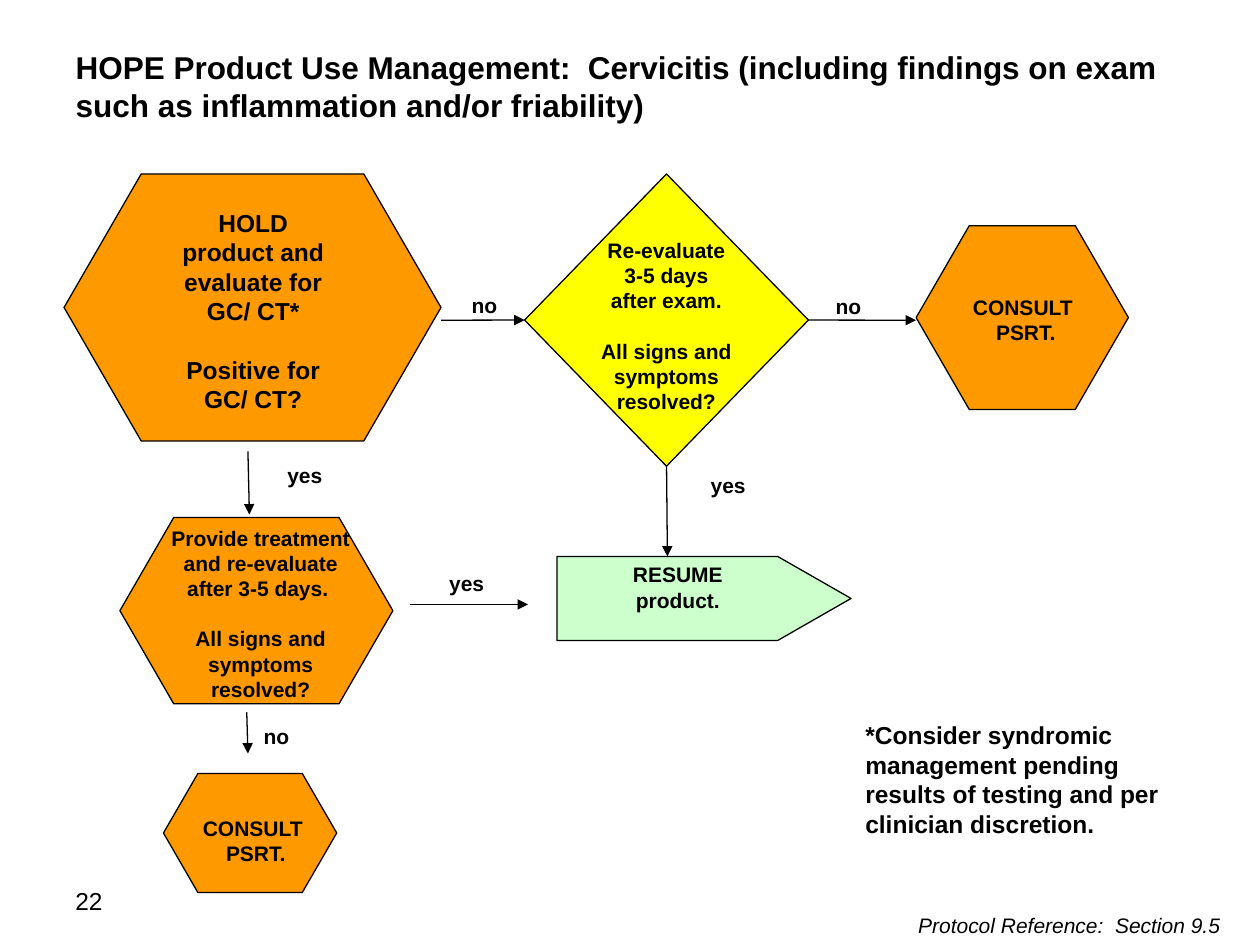
from lxml import etree
from pptx import Presentation
from pptx.dml.color import RGBColor
from pptx.enum.shapes import MSO_CONNECTOR, MSO_SHAPE
from pptx.enum.text import MSO_ANCHOR, PP_ALIGN
from pptx.oxml.ns import qn
from pptx.util import Pt

HEXAGON, DIAMOND, PENTAGON = MSO_SHAPE.HEXAGON, MSO_SHAPE.DIAMOND, MSO_SHAPE.PENTAGON
STRAIGHT = MSO_CONNECTOR.STRAIGHT
LEFT, CENTER, RIGHT = PP_ALIGN.LEFT, PP_ALIGN.CENTER, PP_ALIGN.RIGHT
TOP = MSO_ANCHOR.TOP

BLACK = RGBColor(0x00, 0x00, 0x00)
ORANGE = RGBColor(0xFF, 0x99, 0x00)
YELLOW = RGBColor(0xFF, 0xFF, 0x00)
GREEN = RGBColor(0xCC, 0xFF, 0xCC)

TITLE_ONLY = 5
SIDE_LEFT, SIDE_BOTTOM, SIDE_RIGHT = 1, 2, 3
QUESTION = "All signs and symptoms resolved?"


class FlowSlide:
    """Flowchart style and the slide it is applied to; lengths are in points."""

    font = "Arial"
    line_width = 0.75

    def __init__(self, slide):
        self.slide = slide

    def fill_frame(self, frame, lines, size, align, bold=True, italic=False, gap=0):
        """Set one paragraph per line, with gap points between paragraphs."""
        frame.word_wrap = True
        frame.vertical_anchor = TOP
        frame.text = "\n".join(lines)
        for index, para in enumerate(frame.paragraphs):
            para.alignment = align
            para.space_before = Pt(gap if index else 0)
            for span in para.runs:
                font = span.font
                font.name, font.size = self.font, Pt(size)
                font.bold, font.italic = bold, italic
                font.color.rgb = BLACK

    def title(self, text, left, top, width, height):
        box = self.slide.shapes.title
        box.left, box.top, box.width, box.height = map(Pt, (left, top, width, height))
        self.fill_frame(box.text_frame, [text], 18, LEFT)

    def text(self, lines, left, top, width, height, size=12, align=CENTER,
             inset=7.2, **style):
        box = self.slide.shapes.add_textbox(*map(Pt, (left, top, width, height)))
        box.text_frame.margin_left = Pt(inset)
        self.fill_frame(box.text_frame, lines, size, align, **style)

    def node(self, kind, fill, left, top, width, height, adjust=None):
        shape = self.slide.shapes.add_shape(kind, *map(Pt, (left, top, width, height)))
        shape.shadow.inherit = False
        shape.fill.solid()
        shape.fill.fore_color.rgb = fill
        shape.line.color.rgb = BLACK
        shape.line.width = Pt(self.line_width)
        if adjust is not None:
            shape.adjustments[0] = adjust
        return shape

    def hexagon(self, left, top, width, height):
        return self.node(HEXAGON, ORANGE, left, top, width, height, 0.289)

    def arrow(self, x1, y1, x2, y2):
        arrow = self.slide.shapes.add_connector(STRAIGHT, *map(Pt, (x1, y1, x2, y2)))
        arrow.line.color.rgb = BLACK
        arrow.line.width = Pt(self.line_width)
        properties = arrow.element.spPr
        outline = properties.find(qn("a:ln"))
        etree.SubElement(outline, qn("a:tailEnd"), type="triangle")
        etree.SubElement(properties, qn("a:effectLst"))
        return arrow


def main():
    deck = Presentation()
    deck.slide_width, deck.slide_height = Pt(720), Pt(540)
    page = FlowSlide(deck.slides.add_slide(deck.slide_layouts[TITLE_ONLY]))

    page.title("HOPE Product Use Management:  Cervicitis (including findings on exam "
               "such as inflammation and/or friability)", 36, 23.8, 648, 51)

    page.hexagon(36.6, 99.4, 215.4, 152.6)
    page.hexagon(68.5, 295.7, 156, 106.5)
    page.hexagon(523.5, 129, 121.3, 105)
    page.hexagon(93.4, 442, 99, 68)
    recheck = page.node(DIAMOND, YELLOW, 299.8, 99.4, 162.2, 167)
    page.node(PENTAGON, GREEN, 318.3, 318, 168, 48, 0.873)

    page.text(["HOLD product and evaluate for GC/ CT*", "Positive for GC/ CT?"],
              90.7, 115.2, 108, 143.3, size=14, gap=16.8)
    page.text(["Provide treatment and re-evaluate after 3-5 days. ", QUESTION],
              87, 296.5, 124, 124, gap=14.4)
    page.text(["Re-evaluate 3-5 days after exam.", QUESTION],
              336.2, 132, 89.3, 108.7, gap=14.4)
    page.text(["RESUME", "product."], 325.4, 317.5, 124, 36.7)
    for left, top in ((524.2, 164.9), (84.2, 462.2)):
        page.text(["CONSULT ", "PSRT."], left, top, 124, 36.7)

    page.arrow(252, 183, 300, 183).end_connect(recheck, SIDE_LEFT)
    page.arrow(462, 183, 523.5, 183).begin_connect(recheck, SIDE_RIGHT)
    page.arrow(381, 266.4, 381.4, 318).begin_connect(recheck, SIDE_BOTTOM)
    page.arrow(141.7, 258, 142.5, 294)
    page.arrow(141, 407, 141.7, 430.6)
    page.arrow(234, 345.4, 301.7, 345.4)

    for answer, left, top in (("no", 241.9, 163.6), ("no", 450, 164.2),
                              ("no", 123.1, 409.7), ("yes", 231.8, 322.6)):
        page.text([answer], left, top, 69.8, 21.6)
    for left, top in ((406.1, 266.4), (164.2, 260.6)):
        page.text(["yes"], left, top, 38.2, 21.6, align=LEFT, inset=0)

    page.text(["*Consider syndromic management pending results of testing and per "
               "clinician discretion."], 487.4, 408.2, 203.8, 74.9, size=14, align=LEFT)
    page.text(["22"], 36, 502.6, 167.8, 37.4, size=14, align=LEFT, bold=False)
    page.text(["Protocol Reference:  Section 9.5 "], 437.8, 518, 270, 21.6,
              align=RIGHT, bold=False, italic=True)

    deck.save("out.pptx")


if __name__ == "__main__":
    main()
